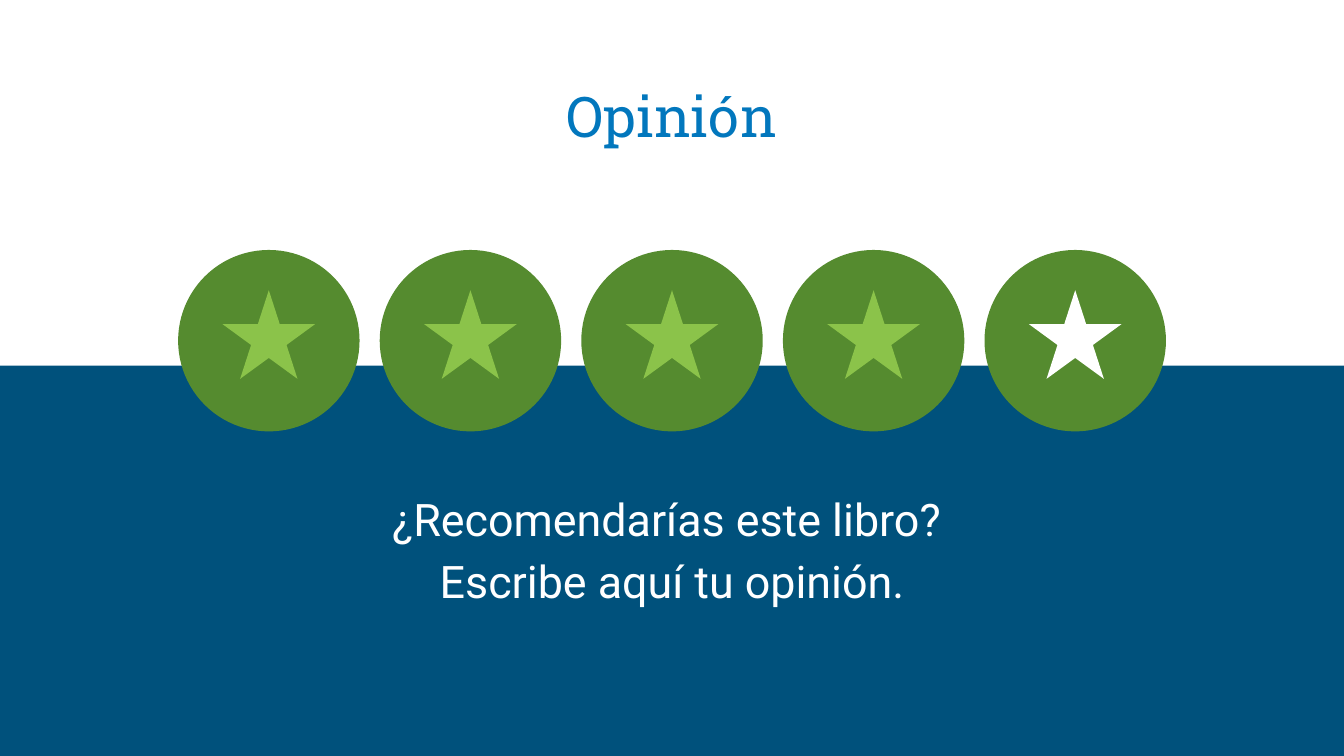
import pptx
import pptx.util
import pptx.dml.color
import pptx.enum.shapes
import pptx.enum.text

Inches = pptx.util.Inches
Shape = pptx.enum.shapes.MSO_SHAPE
Anchor = pptx.enum.text.MSO_ANCHOR

WHITE = "FFFFFF"
NAVY = "00517C"
BLUE = "0277BD"
GREEN = "558B2F"
LIME = "8BC34A"


def set_fill(fill, color):
    fill.solid()
    fill.fore_color.rgb = pptx.dml.color.RGBColor.from_string(color)


def add_shape(shapes, kind, x, y, w, h, color):
    sp = shapes.add_shape(kind, Inches(x), Inches(y), Inches(w), Inches(h))
    set_fill(sp.fill, color)
    sp.line.fill.background()
    sp.shadow.inherit = False
    return sp


def add_text(s, text, y, h, font, size, color, anchor):
    sp = s.shapes.add_textbox(Inches(0.34), Inches(y), Inches(9.32), Inches(h))
    tf = sp.text_frame
    tf.word_wrap = True
    tf.vertical_anchor = anchor
    tf.margin_left = tf.margin_right = Inches(0.1)
    tf.margin_top = tf.margin_bottom = Inches(0.1)
    p = tf.paragraphs[0]
    p.text = text
    p.alignment = pptx.enum.text.PP_ALIGN.CENTER
    p.font.name = font
    p.font.size = pptx.util.Pt(size)
    p.font.color.rgb = pptx.dml.color.RGBColor.from_string(color)
    return p


def add_rating_star(s, x, color):
    group = s.shapes.add_group_shape()
    add_shape(group.shapes, Shape.OVAL, x, 1.86, 1.35, 1.35, GREEN)
    add_shape(group.shapes, Shape.STAR_5_POINT, x + 0.33, 2.16, 0.69, 0.66, color)


def add_rating(s, score, total):
    for i in range(total):
        add_rating_star(s, 1.325 + 1.5 * i, LIME if i < score else WHITE)


def main():
    prs = pptx.Presentation()
    prs.slide_width = Inches(10)
    prs.slide_height = Inches(5.625)
    s = prs.slides.add_slide(prs.slide_layouts[6])
    set_fill(s.background.fill, NAVY)

    add_shape(s.shapes, Shape.RECTANGLE, 0, 0, 10.02, 2.72, WHITE)
    add_text(s, "Opinión", 0.41, 0.8, "Roboto Slab", 30, BLUE, Anchor.BOTTOM)
    add_rating(s, score=4, total=5)
    p = add_text(s, "¿Recomendarías este libro? \vEscribe aquí tu opinión.",
                 3.5, 1.76, "Roboto", 24, WHITE, Anchor.TOP)
    p.line_spacing = 1.15
    p.space_after = pptx.util.Pt(16)

    prs.save("out.pptx")


if __name__ == "__main__":
    main()
